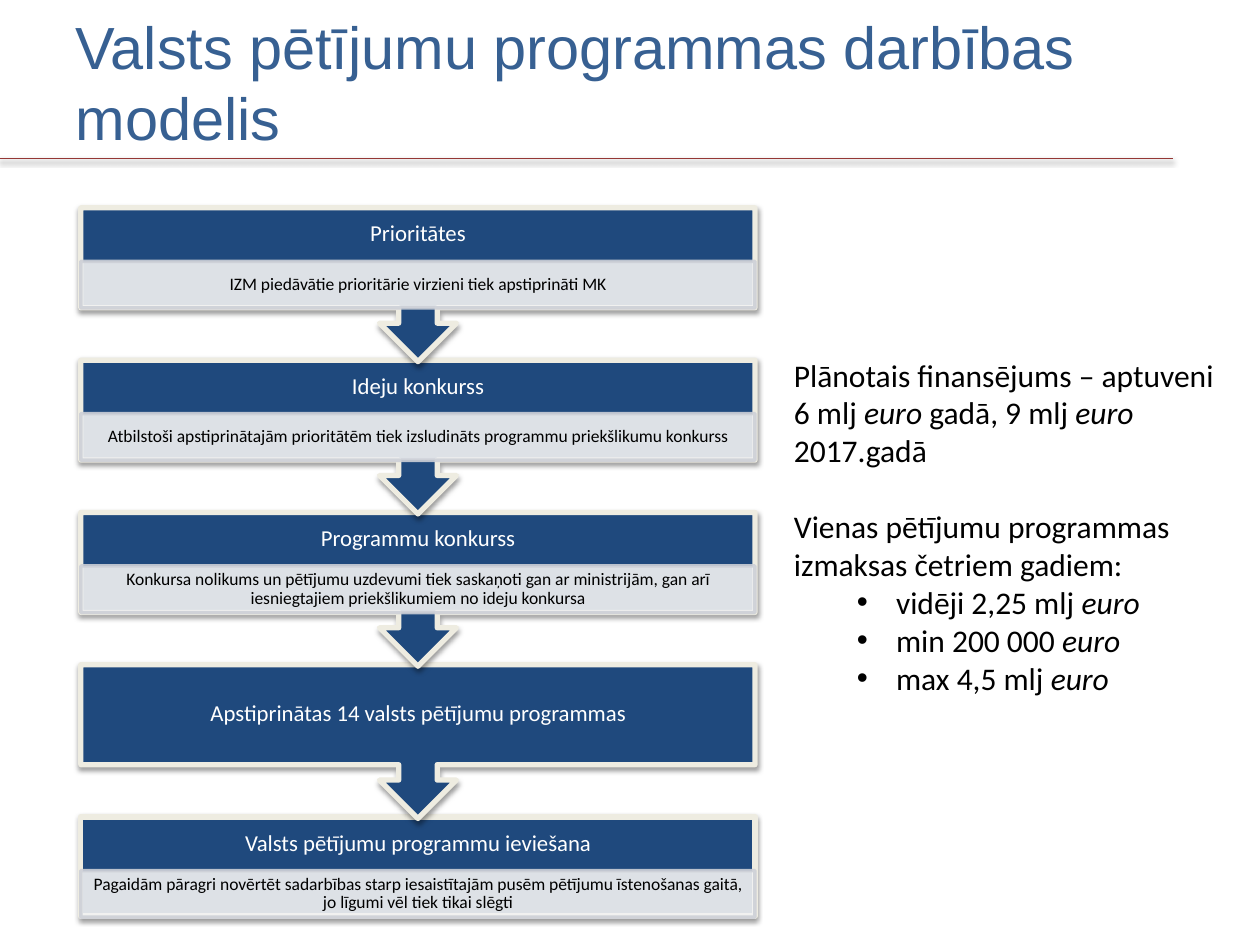
from dataclasses import dataclass

from lxml.etree import SubElement
from pptx import Presentation
from pptx.dml.color import RGBColor
from pptx.enum.shapes import MSO_CONNECTOR, MSO_SHAPE as Shape
from pptx.enum.text import MSO_ANCHOR as Anchor, MSO_AUTO_SIZE as AutoSize, PP_ALIGN as Align
from pptx.oxml.ns import qn
from pptx.util import Cm, Pt


@dataclass(frozen=True)
class Theme:
    title: str = "376092"
    navy: str = "1F497D"
    cream: str = "EEECE1"
    band: str = "F2F2F2"
    band_edge: str = "CDD0D7"
    rule: str = "953735"
    white: str = "FFFFFF"
    black: str = "000000"
    title_font: str = "Arial"
    body_font: str = "Calibri"
    title_size: int = 34
    body_size: int = 18
    heading_size: int = 13
    detail_size: int = 10


THEME = Theme()

# Process column, in centimetres
LEFT, TOP, WIDTH = 1.63, 4.19, 13.59
PITCH, BOX_HEIGHT, CALLOUT_HEIGHT = 3.07, 2.0, 3.1
HEADING_HEIGHT, BAND_HEIGHT = 1.08, 0.94

STAGES = [
    ("Prioritātes", "IZM piedāvātie prioritārie virzieni tiek apstiprināti MK"),
    ("Ideju konkurss",
     "Atbilstoši apstiprinātajām prioritātēm tiek izsludināts programmu priekšlikumu konkurss"),
    ("Programmu konkurss",
     "Konkursa nolikums un pētījumu uzdevumi tiek saskaņoti gan ar ministrijām, "
     "gan arī iesniegtajiem priekšlikumiem no ideju konkursa"),
    ("Apstiprinātas 14 valsts pētījumu programmas", None),
    ("Valsts pētījumu programmu ieviešana",
     "Pagaidām pāragri novērtēt sadarbības starp iesaistītajām pusēm pētījumu "
     "īstenošanas gaitā, jo līgumi vēl tiek tikai slēgti"),
]

# Each paragraph: (text pieces, bulleted, space before in points)
EURO = "euro"
FUNDING = [
    (["Plānotais finansējums – aptuveni 6 mlj ", EURO, " gadā, 9 mlj ", EURO, " 2017.gadā"],
     False, 0),
    (["Vienas pētījumu programmas izmaksas četriem gadiem:"], False, 22),
    (["vidēji 2,25 mlj ", EURO], True, 0),
    (["min 200 000 ", EURO], True, 0),
    (["max 4,5 mlj ", EURO], True, 0),
]


def place(shape, left, top, width, height):
    shape.left, shape.top = Cm(left), Cm(top)
    shape.width, shape.height = Cm(width), Cm(height)


def set_font(para, name, size, color):
    para.font.name, para.font.size = name, Pt(size)
    para.font.color.rgb = RGBColor.from_string(color)


def paint(shape, fill, edge, width):
    shape.fill.solid()
    shape.fill.fore_color.rgb = RGBColor.from_string(fill)
    shape.line.color.rgb = RGBColor.from_string(edge)
    shape.line.width = Pt(width)
    shape.shadow.inherit = False


def make_translucent(shape, percent):
    for color in shape.element.spPr.iter(qn("a:srgbClr")):
        SubElement(color, qn("a:alpha"), val=str(percent * 1000))


def add_shadow(shape):
    properties = shape.element.spPr
    effects = properties.find(qn("a:effectLst"))
    if effects is None:
        effects = SubElement(properties, qn("a:effectLst"))
    shadow = SubElement(effects, qn("a:outerShdw"), blurRad=str(Pt(3.1)),
                        dist=str(Pt(1.6)), dir="5400000", rotWithShape="0")
    color = SubElement(shadow, qn("a:srgbClr"), val=THEME.black)
    SubElement(color, qn("a:alpha"), val="38000")


def write_centered(shape, text, size, color, inset_x, inset_y):
    frame = shape.text_frame
    frame.word_wrap = True
    frame.vertical_anchor = Anchor.MIDDLE
    frame.margin_left = frame.margin_right = Cm(inset_x)
    frame.margin_top = frame.margin_bottom = Cm(inset_y)
    para = frame.paragraphs[0]
    para.text = text
    para.alignment = Align.CENTER
    para.line_spacing = 0.9
    set_font(para, THEME.body_font, size, color)


def add_stage(page, top, heading, detail, is_last):
    # Frame: a plain box at the end, otherwise a callout pointing down
    kind = Shape.RECTANGLE if is_last else Shape.UP_ARROW_CALLOUT
    height = BOX_HEIGHT if is_last else CALLOUT_HEIGHT
    box = page.shapes.add_shape(kind, Cm(LEFT), Cm(top), Cm(WIDTH), Cm(height))
    box.rotation = 0 if is_last else 180
    paint(box, THEME.navy, THEME.cream, 3)
    add_shadow(box)

    # Heading
    heading_height = HEADING_HEIGHT if detail else BOX_HEIGHT
    label = page.shapes.add_textbox(Cm(LEFT), Cm(top), Cm(WIDTH), Cm(heading_height))
    write_centered(label, heading, THEME.heading_size, THEME.white, 0.25, 0.25)

    # Detail band
    if detail:
        band = page.shapes.add_shape(Shape.RECTANGLE, Cm(LEFT), Cm(top + HEADING_HEIGHT),
                                     Cm(WIDTH), Cm(BAND_HEIGHT))
        paint(band, THEME.band, THEME.band_edge, 2)
        make_translucent(band, 90)
        write_centered(band, detail, THEME.detail_size, THEME.black, 0.2, 0.03)


def format_bullet(para, bulleted):
    properties = para._p.get_or_add_pPr()
    properties.set("marL", str(Cm(2.06 if bulleted else 0)))
    properties.set("indent", str(Cm(-0.79 if bulleted else 0)))
    if bulleted:
        SubElement(properties, qn("a:buFont"), typeface="Arial")
        SubElement(properties, qn("a:buChar"), char="•")
    else:
        SubElement(properties, qn("a:buNone"))


def fill_title(title):
    place(title, 1.27, 0.05, 22.86, 3.18)
    frame = title.text_frame
    frame.auto_size = AutoSize.NONE
    frame.vertical_anchor = Anchor.MIDDLE
    para = frame.paragraphs[0]
    para.text = "Valsts pētījumu programmas darbības modelis"
    para.alignment = Align.LEFT
    set_font(para, THEME.title_font, THEME.title_size, THEME.title)


def fill_funding(body):
    place(body, 15.75, 7.04, 9.37, 7.19)
    frame = body.text_frame
    frame.auto_size = AutoSize.NONE
    frame.word_wrap = True
    for index, (pieces, bulleted, space) in enumerate(FUNDING):
        para = frame.add_paragraph() if index else frame.paragraphs[0]
        para.level = int(bulleted)
        para.space_before = Pt(space)
        format_bullet(para, bulleted)
        set_font(para, THEME.body_font, THEME.body_size, THEME.black)
        for piece in pieces:
            span = para.add_run()
            span.text = piece
            if piece == EURO:
                span.font.italic = True


def add_rule(page):
    rule = page.shapes.add_connector(MSO_CONNECTOR.STRAIGHT, Cm(0), Cm(3.2), Cm(23.65), Cm(3.2))
    rule.line.color.rgb = RGBColor.from_string(THEME.rule)
    rule.line.width = Pt(0.75)
    add_shadow(rule)


def main():
    deck = Presentation()
    deck.slide_width, deck.slide_height = Cm(25.4), Cm(19.05)
    page = deck.slides.add_slide(deck.slide_layouts[1])

    # Title and funding notes
    fill_title(page.shapes.title)
    fill_funding(page.placeholders[1])

    # Stages from the bottom up, so each arrow overlaps the next box
    last = len(STAGES) - 1
    for index in range(last, -1, -1):
        add_stage(page, TOP + index * PITCH, *STAGES[index], index == last)

    # Line under the title
    add_rule(page)
    deck.save("out.pptx")


if __name__ == "__main__":
    main()
